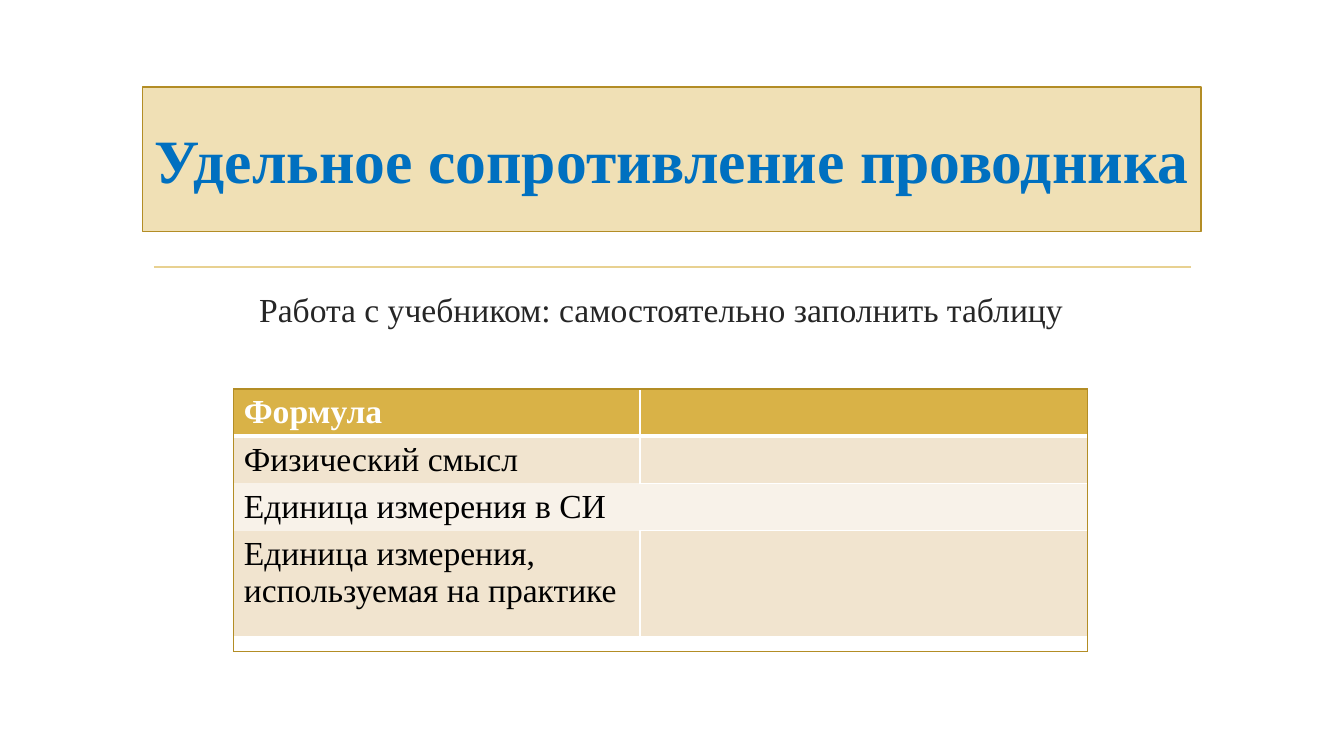
import pptx
import pptx.util
import pptx.dml.color
import pptx.enum.shapes
import pptx.enum.text
import pptx.oxml.ns
from lxml import etree

Pt = pptx.util.Pt
RGB = pptx.dml.color.RGBColor.from_string
ALIGN = pptx.enum.text.PP_ALIGN
ANCHOR = pptx.enum.text.MSO_ANCHOR

TITLE = "Удельное сопротивление проводника"
TASK = "Работа с учебником: самостоятельно заполнить таблицу"

THEME = {
    "font": "Times New Roman", "title_size": 44, "text_size": 24,
    "title": "0070C0", "task": "262626", "ink": "000000", "white": "FFFFFF",
    "panel": "F0E0B5", "gold": "B38D25", "rule": "E8D191",
    "header": "D9B247", "band_dark": "F1E4CF", "band_light": "F8F2E9",
}

# Label, fill, text colour, least row height, then the bordered sides of both cells
ROWS = [
    ("Формула", "header", "white", 24, ("LTRB", "LTRB")),
    ("Физический смысл", "band_dark", "ink", 24, ("LTR", "LTRB")),
    ("Единица измерения в СИ", "band_light", "ink", 24, ("", "TRB")),
    ("Единица измерения, используемая на практике", "band_dark", "ink", 75.6,
     ("LRB", "LTRB")),
]
HEADER_RULE = 3
COLUMNS = (290.2, 319.7)
TABLE_LEFT, TABLE_TOP = 167, 277.8
TABLE_HEIGHT, FRAME_HEIGHT = 183.6, 187.5


def write(tf, text, size, color, bold=False, align=ALIGN.LEFT, indent=0,
          anchor=ANCHOR.TOP):
    tf.word_wrap = True
    tf.vertical_anchor = anchor
    tf.auto_size = pptx.enum.text.MSO_AUTO_SIZE.NONE
    p = tf.paragraphs[0]
    p.alignment = align
    if indent:
        p._p.get_or_add_pPr().set("marL", str(Pt(indent)))
    style(p.add_run(), text, size, color, bold)


def style(r, text, size, color, bold):
    r.text = text
    r.font.name = THEME["font"]
    r.font.size = Pt(size)
    r.font.bold = bold
    r.font.color.rgb = RGB(THEME[color])


def add_plain_table(s, heights, widths, total_height):
    """Add a table at the shared corner with the banded style switched off."""
    holder = s.shapes.add_table(len(heights), len(widths), Pt(TABLE_LEFT), Pt(TABLE_TOP),
                                Pt(sum(widths)), Pt(total_height))
    table = holder.table
    table.first_row = table.horz_banding = False
    for row, height in zip(table.rows, heights):
        row.height = Pt(height)
    for column, width in zip(table.columns, widths):
        column.width = Pt(width)
    holder.height = Pt(total_height)
    return table


def format_cell(cell, fill, sides, color, widths):
    """Draw the named sides (1 pt unless widths says otherwise), then the fill."""
    qn = pptx.oxml.ns.qn
    props = cell._tc.get_or_add_tcPr()
    for side in "LRTB":
        ln = etree.SubElement(props, qn("a:ln" + side), w=str(Pt(widths.get(side, 1))))
        if side in sides:
            solid = etree.SubElement(ln, qn("a:solidFill"))
            etree.SubElement(solid, qn("a:srgbClr"), val=THEME[color])
        else:
            etree.SubElement(ln, qn("a:noFill"))
    if fill:
        cell.fill.solid()
        cell.fill.fore_color.rgb = RGB(THEME[fill])
    else:
        cell.fill.background()


def add_heading(s):
    rule = s.shapes.add_connector(pptx.enum.shapes.MSO_CONNECTOR.STRAIGHT,
                                  Pt(110), Pt(190.8), Pt(850.6), Pt(190.8))
    rule.line.color.rgb = RGB(THEME["rule"])
    rule.line.width = Pt(1.25)
    etree.SubElement(rule._element.spPr, pptx.oxml.ns.qn("a:effectLst"))

    title = s.shapes.title
    title.left, title.top, title.width, title.height = Pt(102), Pt(62.2), Pt(756), Pt(103)
    title.fill.solid()
    title.fill.fore_color.rgb = RGB(THEME["panel"])
    title.line.color.rgb = RGB(THEME["gold"])
    title.line.width = Pt(1)
    write(title.text_frame, TITLE, THEME["title_size"], "title", bold=True,
          align=ALIGN.CENTER, anchor=ANCHOR.MIDDLE)

    task = s.shapes.add_textbox(Pt(136), Pt(202.7), Pt(688), Pt(75.6))
    write(task.text_frame, TASK, THEME["text_size"], "task", indent=42)


def add_worksheet(s):
    table = add_plain_table(s, [row[3] for row in ROWS], COLUMNS, TABLE_HEIGHT)
    for i, (label, fill, color, _, borders) in enumerate(ROWS):
        widths = {0: {"B": HEADER_RULE}, 1: {"T": HEADER_RULE}}.get(i, {})
        for j, sides in enumerate(borders):
            format_cell(table.cell(i, j), fill, sides, "white", widths)
        r = table.cell(i, 0).text_frame.paragraphs[0].add_run()
        style(r, label, THEME["text_size"], color, i == 0)

    frame = add_plain_table(s, [FRAME_HEIGHT], [sum(COLUMNS)], FRAME_HEIGHT)
    format_cell(frame.cell(0, 0), None, "LRTB", "gold", {})


def main():
    prs = pptx.Presentation()
    prs.slide_width, prs.slide_height = Pt(960), Pt(540)
    s = prs.slides.add_slide(prs.slide_layouts.get_by_name("Title Only"))
    add_heading(s)
    add_worksheet(s)
    prs.save("out.pptx")


if __name__ == "__main__":
    main()
